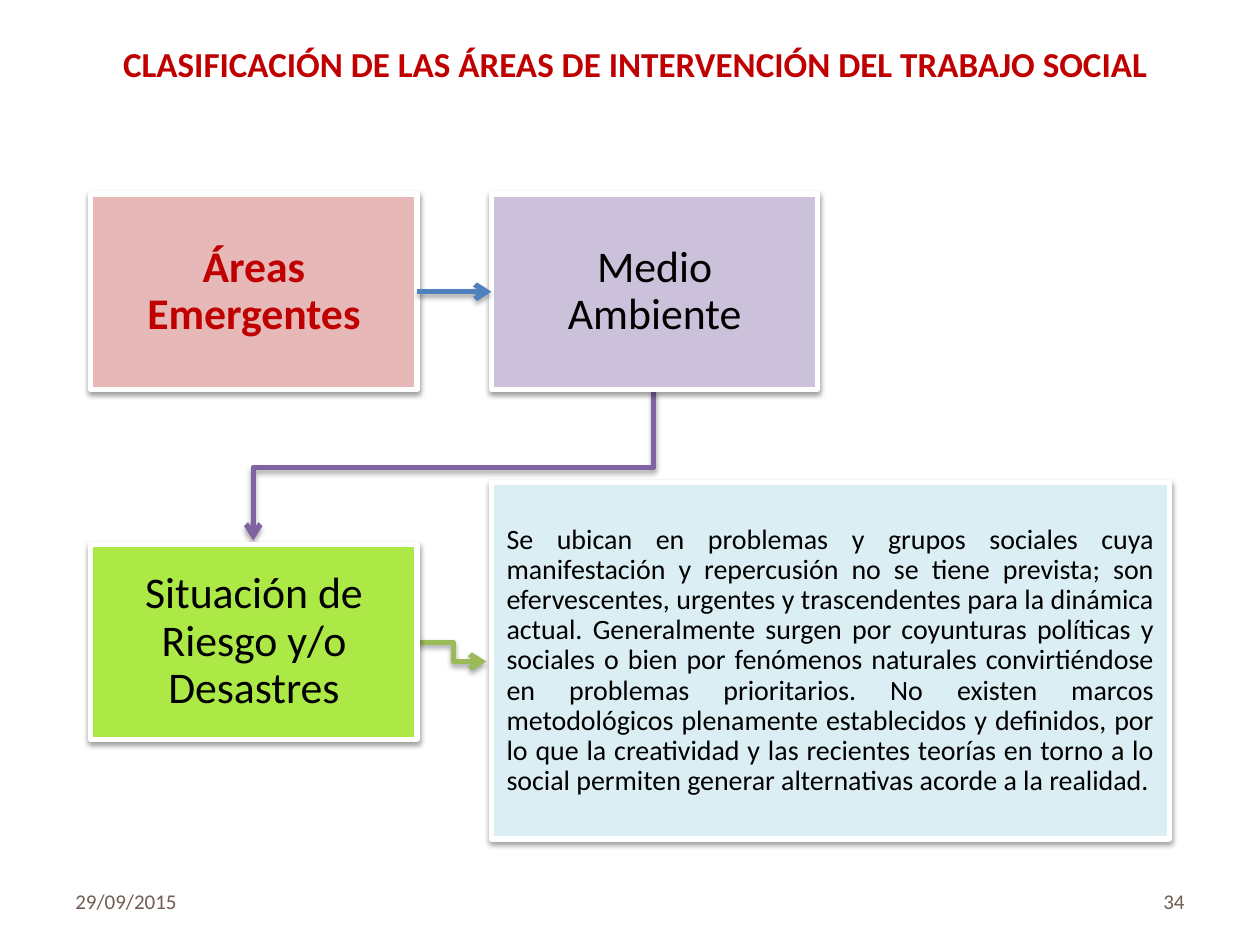
"""Build the slide on emerging areas of social work."""
from typing import NamedTuple

from lxml import etree
from pptx import Presentation
from pptx.dml.color import RGBColor
from pptx.enum import shapes as es, text as et
from pptx.oxml import ns
from pptx.util import Inches, Pt

RED = RGBColor(0xC0, 0x00, 0x00)
BLACK = RGBColor(0, 0, 0)
WHITE = RGBColor(0xFF, 0xFF, 0xFF)
BROWN = RGBColor(0x72, 0x5B, 0x51)
PINK = RGBColor(0xE6, 0xB9, 0xB8)
LILAC = RGBColor(0xCC, 0xC1, 0xDA)
LIME = RGBColor(0xAC, 0xE9, 0x46)
SKY = RGBColor(0xDB, 0xEE, 0xF4)
BLUE = RGBColor(0x4F, 0x81, 0xBD)
PURPLE = RGBColor(0x80, 0x64, 0xA2)
GREEN = RGBColor(0x9B, 0xBB, 0x59)

LEFT, RIGHT = 0.72, 3.9
WIDE, HIGH = 2.59, 1.55
TOP, LOW = 1.54, 4.32
CENTER = et.PP_ALIGN.CENTER
DETAIL = (
    "Se ubican en problemas y grupos sociales cuya manifestación y repercusión no se tiene "
    "prevista; son efervescentes, urgentes y trascendentes para la dinámica actual. "
    "Generalmente surgen por coyunturas políticas y sociales o bien por fenómenos naturales "
    "convirtiéndose en problemas prioritarios. No existen marcos metodológicos plenamente "
    "establecidos y definidos, por lo que la creatividad y las recientes teorías en torno a "
    "lo social permiten generar alternativas acorde a la realidad."
)


class Box(NamedTuple):
    text: str
    x: float
    y: float
    fill: RGBColor
    w: float = WIDE
    h: float = HIGH
    size: int = 25
    color: RGBColor = BLACK
    bold: bool = False
    align: et.PP_ALIGN = CENTER
    inset: float = 0.19


class Bend(NamedTuple):
    color: RGBColor
    points: list[tuple[float, float]]


BOXES = [
    Box("Áreas Emergentes", LEFT, TOP, PINK, color=RED, bold=True),
    Box("Medio Ambiente", RIGHT, TOP, LILAC),
    Box("Situación de Riesgo y/o Desastres", LEFT, LOW, LIME),
    Box(DETAIL, RIGHT, 3.83, SKY, w=5.38, h=2.83, size=16,
        align=et.PP_ALIGN.JUSTIFY, inset=0.12),
]
BENDS = [
    Bend(PURPLE, [(5.19, 3.09), (5.19, 3.71), (2.01, 3.71), (2.01, 4.29)]),
    Bend(GREEN, [(3.3, 5.1), (3.6, 5.1), (3.6, 5.25), (3.86, 5.25)]),
]


def write(shape, text: str, *, size: int, color: RGBColor, bold: bool = False,
          align=et.PP_ALIGN.LEFT, anchor=et.MSO_ANCHOR.MIDDLE,
          inset: float | None = None, space: float = 1.0) -> None:
    """Put one formatted paragraph in a shape."""
    frame = shape.text_frame
    frame.word_wrap = True
    frame.vertical_anchor = anchor
    if inset is not None:
        frame.margin_left = frame.margin_right = Inches(inset)
        frame.margin_top = frame.margin_bottom = Inches(inset)
    par = frame.paragraphs[0]
    par.text = text
    par.alignment = align
    par.line_spacing = space
    font = par.runs[0].font
    font.name, font.size, font.bold = "Calibri", Pt(size), bold
    font.color.rgb = color


def outline(shape, color: RGBColor, dist: float, alpha: int, arrow: bool = False) -> None:
    """Give a shape its line, soft shadow and optional arrowhead."""
    shape.line.color.rgb = color
    shape.line.width = Pt(3)
    props = shape._element.spPr
    if arrow:
        etree.SubElement(props.find(ns.qn("a:ln")), ns.qn("a:tailEnd"), type="arrow")
    effects = etree.SubElement(props, ns.qn("a:effectLst"))
    shade = etree.SubElement(effects, ns.qn("a:outerShdw"), blurRad=str(Pt(3.1)),
                             dist=str(Pt(dist)), dir="5400000", rotWithShape="0")
    tint = etree.SubElement(shade, ns.qn("a:srgbClr"), val="000000")
    etree.SubElement(tint, ns.qn("a:alpha"), val=str(alpha * 1000))


def draw_box(slide, box: Box):
    """Draw one filled box with its text."""
    shape = slide.shapes.add_shape(es.MSO_SHAPE.RECTANGLE, Inches(box.x), Inches(box.y),
                                   Inches(box.w), Inches(box.h))
    shape.fill.solid()
    shape.fill.fore_color.rgb = box.fill
    outline(shape, WHITE, 1.6, 38)
    write(shape, box.text, size=box.size, color=box.color, bold=box.bold,
          align=box.align, inset=box.inset, space=0.9)
    return shape


def draw_bend(slide, bend: Bend) -> None:
    """Draw one bent arrow."""
    start, *rest = [(Inches(x), Inches(y)) for x, y in bend.points]
    pen = slide.shapes.build_freeform(*start)
    pen.add_line_segments(rest, close=False)
    shape = pen.convert_to_shape()
    shape.fill.background()
    outline(shape, bend.color, 1.8, 35, arrow=True)


def draw_link(slide, first, last) -> None:
    """Join two boxes side by side with a straight arrow."""
    link = slide.shapes.add_connector(es.MSO_CONNECTOR.STRAIGHT, 0, 0, 0, 0)
    link.begin_connect(first, 3)
    link.end_connect(last, 1)
    outline(link, BLUE, 1.8, 35, arrow=True)


def draw_foot(slide, text: str, x: float, align) -> None:
    """Write one footer item."""
    shape = slide.shapes.add_textbox(Inches(x), Inches(6.95), Inches(2.33), Inches(0.4))
    write(shape, text, size=12, color=BROWN, align=align)


def main() -> None:
    """Build and save the slide."""
    deck = Presentation()
    deck.slide_width, deck.slide_height = Inches(10), Inches(7.5)
    slide = deck.slides.add_slide(deck.slide_layouts[5])
    title = slide.shapes.title
    title.left, title.top = Inches(0.83), Inches(0.29)
    title.width, title.height = Inches(8.43), Inches(0.44)
    write(title, "CLASIFICACIÓN DE LAS ÁREAS DE INTERVENCIÓN DEL TRABAJO SOCIAL",
          size=20, color=RED, bold=True, align=CENTER, anchor=et.MSO_ANCHOR.TOP)
    title.text_frame.auto_size = et.MSO_AUTO_SIZE.SHAPE_TO_FIT_TEXT
    for bend in BENDS:
        draw_bend(slide, bend)
    cards = [draw_box(slide, box) for box in BOXES]
    draw_link(slide, cards[0], cards[1])
    draw_foot(slide, "29/09/2015", 0.5, et.PP_ALIGN.LEFT)
    draw_foot(slide, "34", 7.17, et.PP_ALIGN.RIGHT)
    deck.save("out.pptx")


if __name__ == "__main__":
    main()
